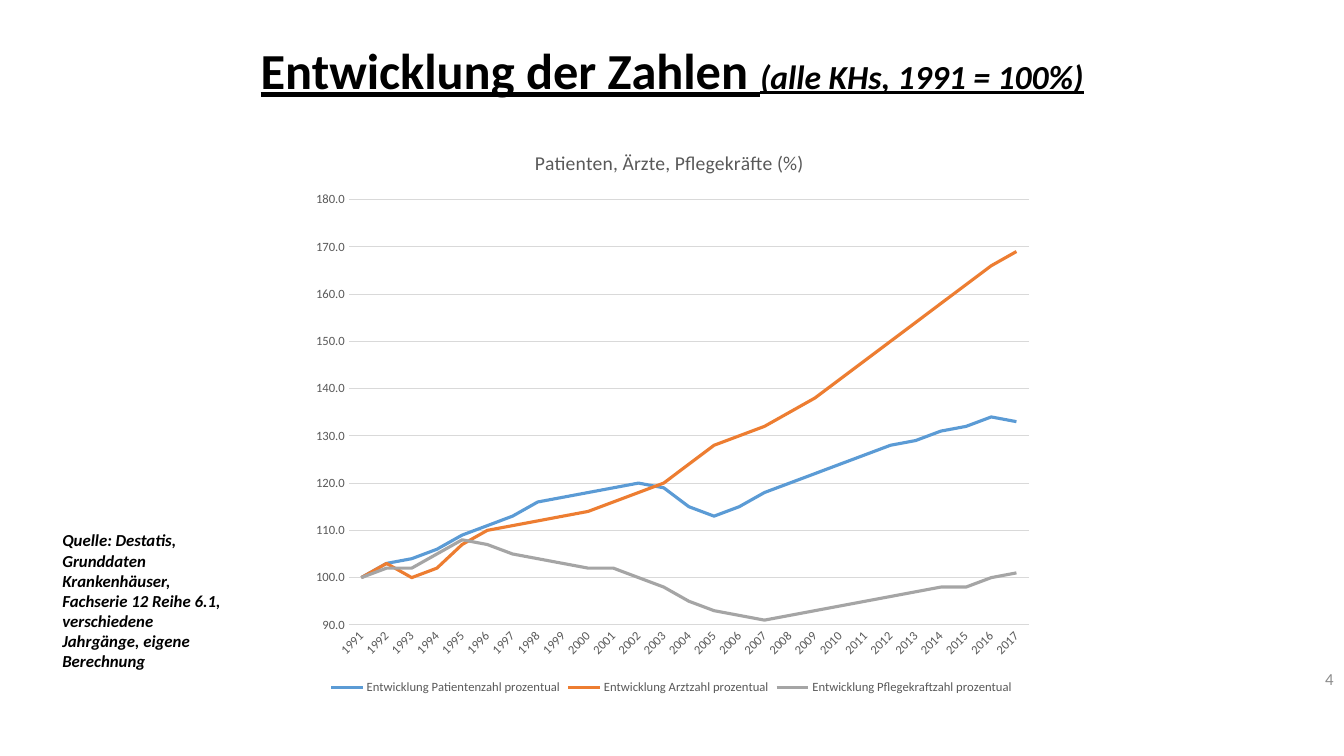
from dataclasses import dataclass

from pptx import Presentation
from pptx.chart.data import CategoryChartData
from pptx.dml.color import RGBColor
from pptx.enum.chart import XL_CHART_TYPE, XL_LEGEND_POSITION, XL_TICK_MARK
from pptx.enum.text import MSO_ANCHOR, PP_ALIGN
from pptx.oxml import parse_xml
from pptx.oxml.ns import nsdecls, qn
from pptx.util import Inches, Pt


@dataclass(frozen=True)
class Theme:
    font: str = "Calibri"
    black: RGBColor = RGBColor.from_string("000000")
    chart_text: RGBColor = RGBColor.from_string("595959")
    grid: RGBColor = RGBColor.from_string("D9D9D9")
    page: RGBColor = RGBColor.from_string("8C8C8C")
    patients: RGBColor = RGBColor.from_string("5B9BD5")
    doctors: RGBColor = RGBColor.from_string("ED7D31")
    nurses: RGBColor = RGBColor.from_string("A5A5A5")
    heading: Pt = Pt(36)
    subheading: Pt = Pt(24)
    chart_title: Pt = Pt(14)
    note: Pt = Pt(12)
    label: Pt = Pt(9)


theme = Theme()
chart_width, chart_height = Inches(7.36), Inches(5.64)


def style(font, size, color, **flags):
    font.name = theme.font
    font.size = size
    font.color.rgb = color
    for flag, value in flags.items():
        setattr(font, flag, value)


def place(element, index, target="", **lengths):
    """Fix a chart part at lengths (x, y, w, h) measured inside the chart."""
    present = element.find(qn("c:layout"))
    if present is not None:
        element.remove(present)
    inner = f'<c:layoutTarget val="{target}"/>' if target else ""
    modes = '<c:xMode val="edge"/><c:yMode val="edge"/>'
    values = "".join(
        f'<c:{key} val="{length / (chart_width if key in "xw" else chart_height)}"/>'
        for key, length in lengths.items())
    element.insert(index, parse_xml(
        f'<c:layout {nsdecls("c")}><c:manualLayout>{inner}{modes}{values}'
        "</c:manualLayout></c:layout>"))


presentation = Presentation()
presentation.slide_width = Inches(40 / 3)
presentation.slide_height = Inches(7.5)
slide = presentation.slides.add_slide(presentation.slide_layouts[5])

# Title
heading = slide.shapes.title
heading.left, heading.top = Inches(0.92), Inches(0)
heading.width, heading.height = Inches(11.5), Inches(1.45)
heading.text_frame.vertical_anchor = MSO_ANCHOR.MIDDLE
heading_line = heading.text_frame.paragraphs[0]
heading_line.alignment = PP_ALIGN.CENTER
heading_line.line_spacing = 0.9
for wording, size, italic in (
    ("Entwicklung der Zahlen ", theme.heading, False),
    ("(alle KHs, 1991 = 100%)", theme.subheading, True),
):
    run = heading_line.add_run()
    run.text = wording
    style(run.font, size, theme.black, bold=True, underline=True, italic=italic)

# Line chart, 1991 = 100
developments = (
    ("Entwicklung Patientenzahl prozentual", theme.patients,
     (100, 103, 104, 106, 109, 111, 113, 116, 117, 118, 119, 120, 119, 115, 113,
      115, 118, 120, 122, 124, 126, 128, 129, 131, 132, 134, 133)),
    ("Entwicklung Arztzahl prozentual", theme.doctors,
     (100, 103, 100, 102, 107, 110, 111, 112, 113, 114, 116, 118, 120, 124, 128,
      130, 132, 135, 138, 142, 146, 150, 154, 158, 162, 166, 169)),
    ("Entwicklung Pflegekraftzahl prozentual", theme.nurses,
     (100, 102, 102, 105, 108, 107, 105, 104, 103, 102, 102, 100, 98, 95, 93,
      92, 91, 92, 93, 94, 95, 96, 97, 98, 98, 100, 101)),
)
chart_data = CategoryChartData(number_format="0.0")
chart_data.categories = [str(year) for year in range(1991, 2018)]
for name, _, values in developments:
    chart_data.add_series(name, values)
chart = slide.shapes.add_chart(
    XL_CHART_TYPE.LINE, Inches(2.98), Inches(1.29), chart_width, chart_height,
    chart_data).chart
style(chart.font, theme.label, theme.chart_text)

for series, (_, color, _) in zip(chart.plots[0].series, developments):
    series.smooth = False
    series.format.line.color.rgb = color
    series.format.line.width = Pt(2.25)

chart.has_title = True
caption = chart.chart_title.text_frame.paragraphs[0].add_run()
caption.text = "Patienten, Ärzte, Pflegekräfte (%)"
style(caption.font, theme.chart_title, theme.chart_text, bold=False)

chart.has_legend = True
chart.legend.position = XL_LEGEND_POSITION.BOTTOM
chart.legend.include_in_layout = False
style(chart.legend.font, theme.label, theme.chart_text)

years, percent = chart.category_axis, chart.value_axis
for axis in (years, percent):
    axis.major_tick_mark = axis.minor_tick_mark = XL_TICK_MARK.NONE
    style(axis.tick_labels.font, theme.label, theme.chart_text)
percent.minimum_scale, percent.maximum_scale = 90, 180
percent.major_unit = 10
percent.tick_labels.number_format = "0.0"
percent.tick_labels.number_format_is_linked = False
percent.format.line.fill.background()
for line in (years.format.line, percent.major_gridlines.format.line):
    line.color.rgb = theme.grid
    line.width = Pt(0.75)

# Slanted year labels, fixed places for caption and plot
years._element.find(qn("c:txPr")).find(qn("a:bodyPr")).set("rot", "-2700000")
place(chart.chart_title._element, 1, x=Inches(2.29), y=Inches(0.16))
place(chart._chartSpace.chart.plotArea, 0, "inner",
      x=Inches(0.48), y=Inches(0.69), w=Inches(6.75), h=Inches(4.22))

# Source note and page number
for wording, box, size_color, alignment, anchor, emphasis in (
    ("Quelle: Destatis, Grunddaten Krankenhäuser, Fachserie 12 Reihe 6.1, "
     "verschiedene Jahrgänge, eigene Berechnung",
     (0.52, 5.21, 1.78, 1.51), (theme.note, theme.black),
     PP_ALIGN.LEFT, MSO_ANCHOR.TOP, True),
    ("4", (10.33, 6.53, 3, 0.4), (theme.note, theme.page),
     PP_ALIGN.RIGHT, MSO_ANCHOR.MIDDLE, False),
):
    frame = slide.shapes.add_textbox(*map(Inches, box)).text_frame
    frame.word_wrap = True
    frame.vertical_anchor = anchor
    paragraph = frame.paragraphs[0]
    paragraph.alignment = alignment
    run = paragraph.add_run()
    run.text = wording
    style(run.font, *size_color, bold=emphasis, italic=emphasis)

presentation.save("out.pptx")
